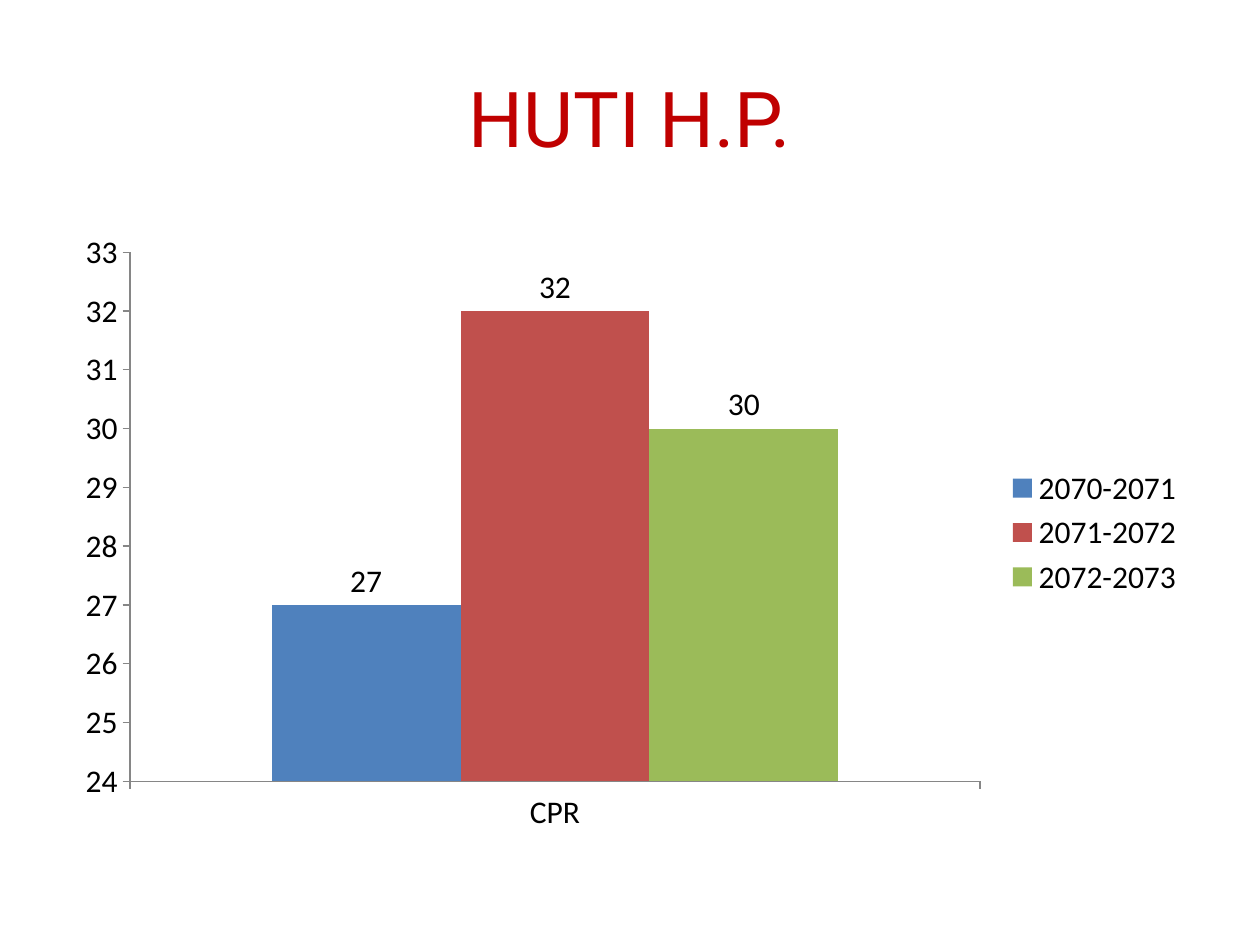
from pptx import Presentation
from pptx.chart.data import CategoryChartData
from pptx.dml.color import RGBColor
from pptx.enum import chart as charts, text
from pptx.util import Cm, Pt

TITLE = "HUTI H.P."
CATEGORIES = ["CPR"]
SERIES = [
    ("2070-2071", [27], "blue"),
    ("2071-2072", [32], "red"),
    ("2072-2073", [30], "green"),
]
COLORS = {
    "title": "C00000",
    "text": "000000",
    "axis": "868686",
    "blue": "4F81BD",
    "red": "C0504D",
    "green": "9BBB59",
}
MARGIN, CONTENT_WIDTH = Cm(1.27), Cm(22.86)


def color(name):
    return RGBColor.from_string(COLORS[name])


def style_font(font, name, size, color_name):
    font.name = name
    font.size = Pt(size)
    font.color.rgb = color(color_name)


def add_title(slide):
    title = slide.shapes.title
    title.left, title.top = MARGIN, Cm(0.76)
    title.width, title.height = CONTENT_WIDTH, Cm(3.18)
    title.text_frame.vertical_anchor = text.MSO_ANCHOR.MIDDLE
    paragraph = title.text_frame.paragraphs[0]
    paragraph.alignment = text.PP_ALIGN.CENTER
    run = paragraph.add_run()
    run.text = TITLE
    style_font(run.font, "Roboto", 44, "title")


def add_column_chart(slide):
    data = CategoryChartData()
    data.categories = CATEGORIES
    for name, values, _ in SERIES:
        data.add_series(name, values)
    chart = slide.shapes.add_chart(
        charts.XL_CHART_TYPE.COLUMN_CLUSTERED,
        MARGIN, Cm(4.45), CONTENT_WIDTH, Cm(12.57), data,
    ).chart
    style_font(chart.font, "Calibri", 18, "text")
    chart.has_title = False
    chart.has_legend = True
    chart.legend.position = charts.XL_LEGEND_POSITION.RIGHT
    chart.legend.include_in_layout = False

    for axis in (chart.category_axis, chart.value_axis):
        axis.has_major_gridlines = False
        axis.major_tick_mark = charts.XL_TICK_MARK.OUTSIDE
        axis.minor_tick_mark = charts.XL_TICK_MARK.NONE
        axis.format.line.color.rgb = color("axis")
        axis.format.line.width = Pt(0.75)
    chart.value_axis.minimum_scale = 24
    chart.value_axis.maximum_scale = 33
    chart.value_axis.major_unit = 1

    plot = chart.plots[0]
    plot.vary_by_categories = False
    plot.gap_width = 150
    plot.overlap = 0
    for series, (_, _, color_name) in zip(plot.series, SERIES):
        series.format.fill.solid()
        series.format.fill.fore_color.rgb = color(color_name)
        labels = series.data_labels
        labels.show_value = True
        labels.position = charts.XL_LABEL_POSITION.OUTSIDE_END


def main():
    presentation = Presentation()
    presentation.slide_width, presentation.slide_height = Cm(25.4), Cm(19.05)
    slide = presentation.slides.add_slide(presentation.slide_layouts[5])
    add_title(slide)
    add_column_chart(slide)
    presentation.save("out.pptx")


if __name__ == "__main__":
    main()
